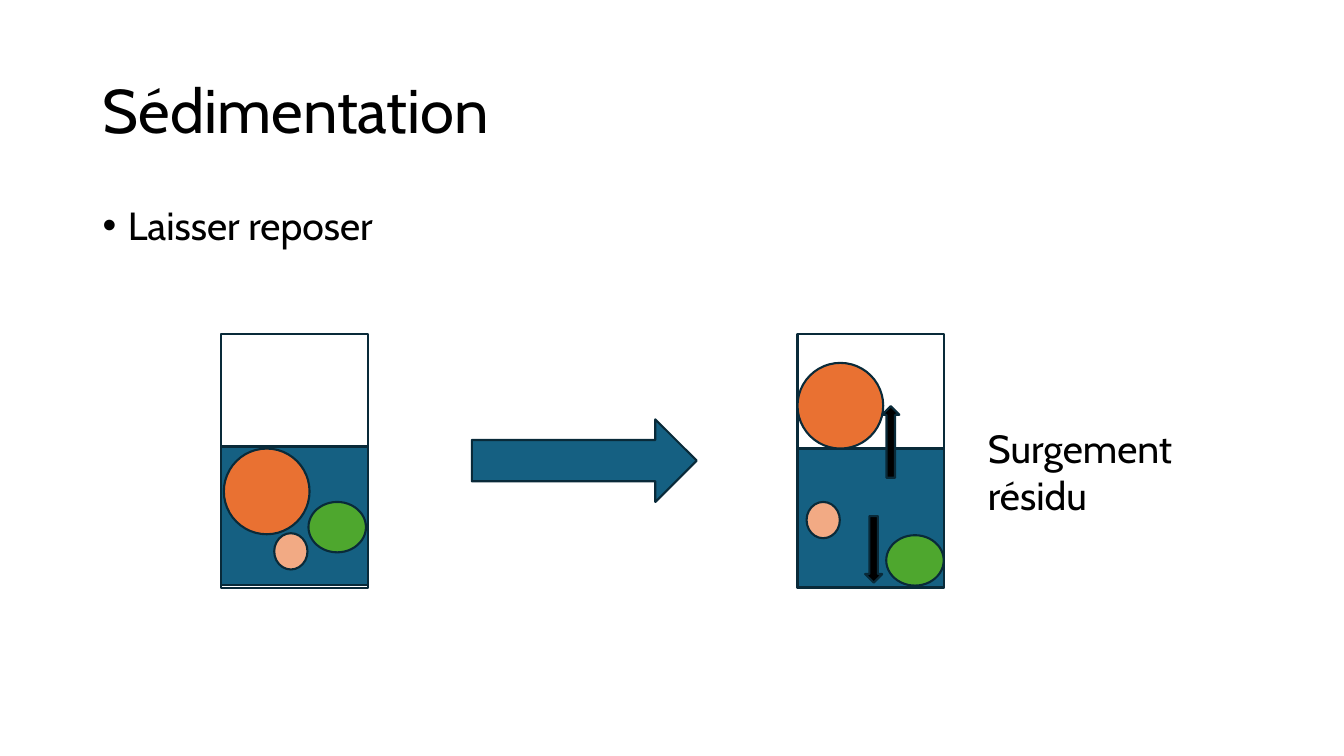
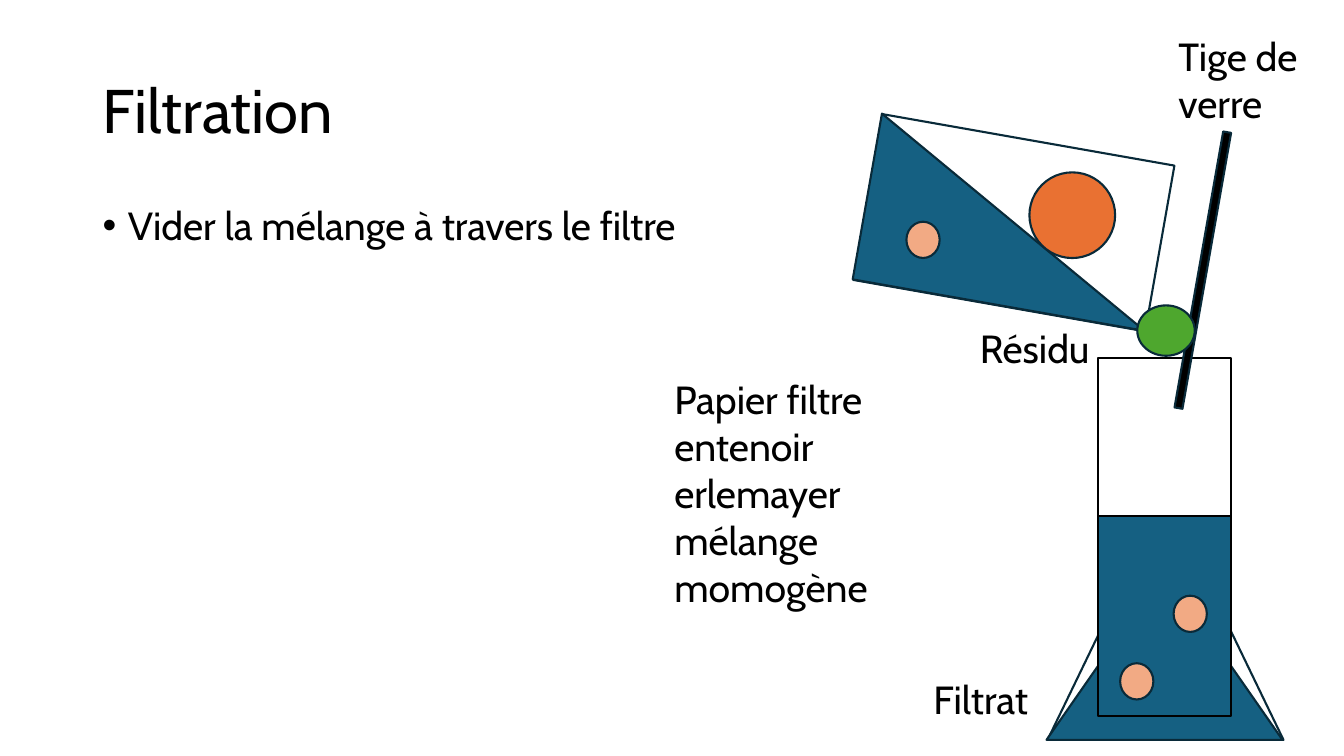
from dataclasses import dataclass

from lxml import etree
from pptx import Presentation
from pptx.dml.color import RGBColor
from pptx.enum import shapes, text
from pptx.oxml import ns
from pptx.slide import Slide
from pptx.text.text import TextFrame
from pptx.util import Inches, Pt

WHITE = RGBColor(0xFF, 0xFF, 0xFF)
BLACK = RGBColor(0x00, 0x00, 0x00)
EDGE = RGBColor(0x09, 0x2A, 0x39)
WATER = RGBColor(0x15, 0x60, 0x82)
GREEN = RGBColor(0x4E, 0xA7, 0x2E)
PEACH = RGBColor(0xF2, 0xAA, 0x84)
ORANGE = RGBColor(0xE9, 0x71, 0x32)
FONT = "Cabin"
KIND = shapes.MSO_SHAPE


@dataclass(frozen=True)
class Part:
    left: float
    top: float
    width: float
    height: float
    fill: RGBColor = WHITE
    kind: shapes.MSO_SHAPE = KIND.RECTANGLE
    edge: RGBColor = EDGE
    turn: float = 0


@dataclass(frozen=True)
class Grain:
    width: float
    height: float
    fill: RGBColor

    def at(self, left: float, top: float) -> Part:
        return Part(left, top, self.width, self.height, self.fill, KIND.OVAL)


@dataclass(frozen=True)
class Label:
    left: float
    top: float
    width: float
    height: float
    words: str


LARGE = Grain(0.85, 0.85, ORANGE)
MEDIUM = Grain(0.57, 0.5, GREEN)
SMALL = Grain(0.33, 0.36, PEACH)


def write(frame: TextFrame, words: str, *, size: float = 28, spacing: float = 1,
          before: float = 0, bullet: bool = False,
          anchor: text.MSO_ANCHOR = text.MSO_ANCHOR.TOP) -> None:
    frame.word_wrap = True
    frame.auto_size = text.MSO_AUTO_SIZE.NONE
    frame.vertical_anchor = anchor
    line = frame.paragraphs[0]
    line.alignment = text.PP_ALIGN.LEFT
    line.line_spacing = spacing
    line.space_before = Pt(before)
    run = line.add_run()
    run.text = words
    run.font.name = FONT
    run.font.size = Pt(size)
    run.font.color.rgb = BLACK
    if bullet:
        props = line._p.get_or_add_pPr()
        props.set("marL", str(Inches(0.25)))
        props.set("indent", str(-Inches(0.25)))
        etree.SubElement(props, ns.qn("a:buFont"), typeface="Arial")
        etree.SubElement(props, ns.qn("a:buChar"), char="•")


def draw(slide: Slide, part: Part) -> None:
    shape = slide.shapes.add_shape(
        part.kind, Inches(part.left), Inches(part.top),
        Inches(part.width), Inches(part.height))
    shape.shadow.inherit = False
    shape.rotation = part.turn
    shape.fill.solid()
    shape.fill.fore_color.rgb = part.fill
    shape.line.color.rgb = part.edge
    shape.line.width = Pt(1.5)


def box(slide: Slide, label: Label, **style) -> None:
    area = slide.shapes.add_textbox(
        Inches(label.left), Inches(label.top),
        Inches(label.width), Inches(label.height))
    write(area.text_frame, label.words, **style)


def build(deck, name: str, point: Label, parts: list[Part], labels: list[Label]) -> None:
    slide = deck.slides.add_slide(deck.slide_layouts.get_by_name("Title Only"))
    title = slide.shapes.title
    title.left, title.top = Inches(0.92), Inches(0.4)
    title.width, title.height = Inches(11.5), Inches(1.45)
    write(title.text_frame, name, size=44, spacing=0.9, anchor=text.MSO_ANCHOR.MIDDLE)
    box(slide, point, spacing=0.9, before=10, bullet=True)
    for part in parts:
        draw(slide, part)
    for label in labels:
        box(slide, label)


def beaker(left: float, width: float, level: float) -> list[Part]:
    return [Part(left, 3.31, width, 2.52),
            Part(left, level, width, 1.37, WATER)]


def settle(deck) -> None:
    parts = [
        *beaker(2.19, 1.46, 4.43),
        *beaker(7.91, 1.45, 4.45),
        Part(4.68, 4.16, 2.23, 0.82, WATER, KIND.RIGHT_ARROW),
        MEDIUM.at(8.79, 5.31), SMALL.at(8, 4.98), LARGE.at(7.91, 3.6),
        MEDIUM.at(3.06, 4.98), LARGE.at(2.22, 4.45), SMALL.at(2.72, 5.29),
        Part(8.75, 4.03, 0.17, 0.71, BLACK, KIND.UP_ARROW),
        Part(8.58, 5.12, 0.17, 0.66, BLACK, KIND.UP_ARROW, turn=180),
    ]
    build(deck, "Sédimentation", Label(0.92, 2, 3.43, 0.81, "Laisser reposer"),
          parts, [Label(9.7, 4.16, 2.22, 1.04, "Surgement résidu")])


def strain(deck) -> None:
    parts = [
        Part(9.22, 0.74, 1.67, 2.94, turn=100),
        Part(8.58, 1.37, 2.94, 1.67, WATER, KIND.RIGHT_TRIANGLE, turn=10),
        Part(10.39, 4.92, 2.34, 2.42, kind=KIND.ISOSCELES_TRIANGLE),
        Part(10.89, 3.55, 1.32, 2.72, edge=BLACK),
        Part(10.38, 5.66, 2.34, 1.68, WATER, KIND.ISOSCELES_TRIANGLE),
        Part(10.89, 5.12, 1.32, 1.98, WATER, edge=BLACK),
        Part(11.89, 1.29, 0.08, 2.78, BLACK, turn=10),
        SMALL.at(8.99, 2.2), SMALL.at(11.11, 6.58), SMALL.at(11.64, 5.91),
        MEDIUM.at(11.28, 3.03), LARGE.at(10.21, 1.71),
    ]
    labels = [
        Label(11.59, 0.27, 1.67, 1.04, "Tige de verre"),
        Label(9.62, 3.17, 1.87, 0.57, "Résidu"),
        Label(9.16, 6.65, 1.47, 0.57, "Filtrat"),
        Label(6.59, 3.67, 3.3, 2.46,
              "Papier filtre entenoir erlemayer mélange momogène"),
    ]
    build(deck, "Filtration",
          Label(0.92, 2, 11.5, 4.76, "Vider la mélange à travers le filtre"),
          parts, labels)


def main() -> None:
    deck = Presentation()
    deck.slide_width, deck.slide_height = Inches(13.33), Inches(7.5)
    settle(deck)
    strain(deck)
    deck.save("out.pptx")


if __name__ == "__main__":
    main()
